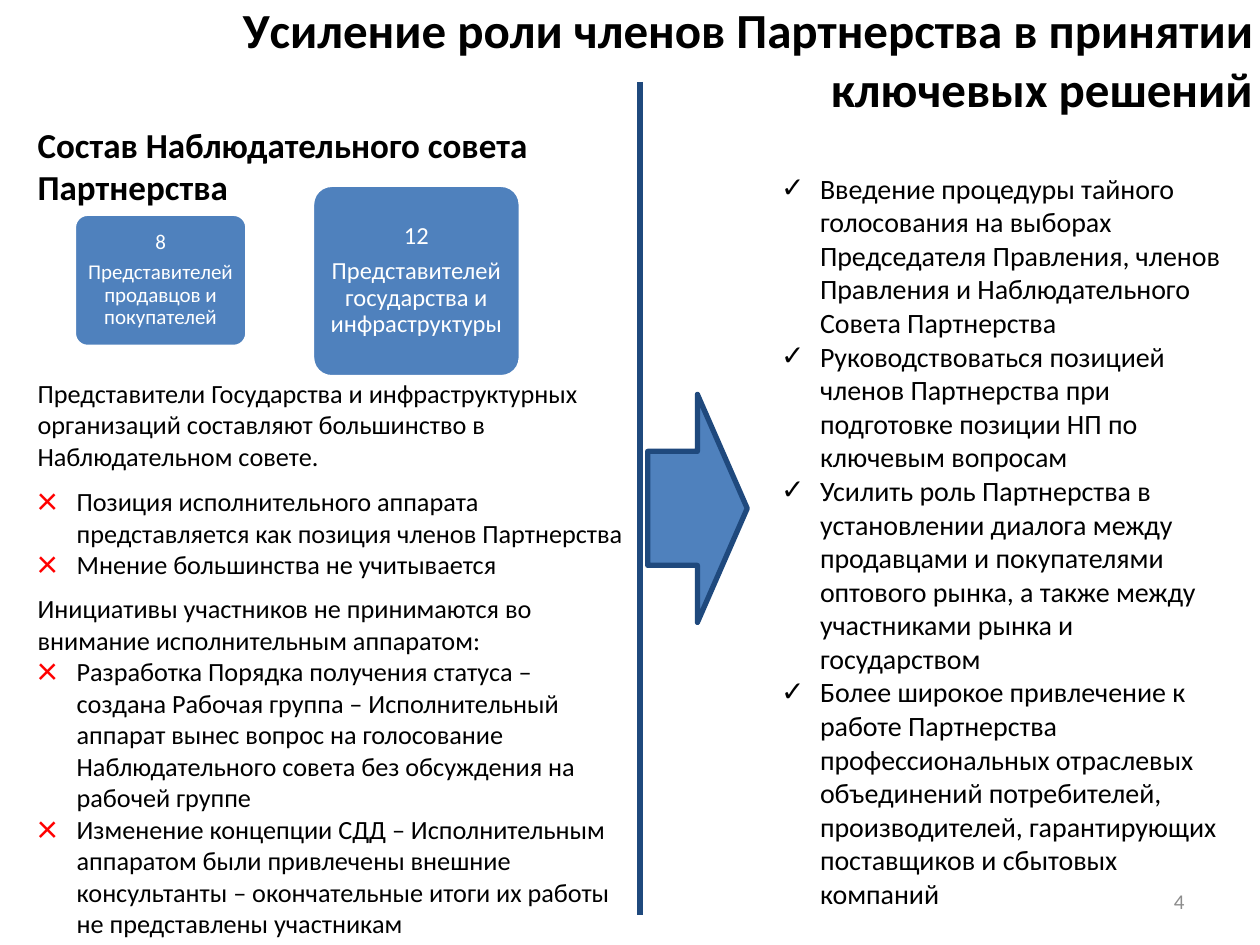
import collections
import pptx
import pptx.dml.color
import pptx.enum.shapes
import pptx.enum.text
import pptx.util
import lxml.etree

COLORS = {
    "text": "000000",
    "fill": "4F81BD",
    "edge": "1F497D",
    "light": "FFFFFF",
    "cross": "FF0000",
    "number": "8C8C8C",
}
FONT = "Calibri"
COLUMNS, ROWS = 100, 75
WIDTH, HEIGHT = pptx.util.Inches(10), pptx.util.Inches(7.5)
INDENT = pptx.util.Inches(0.31)
ALIGN = pptx.enum.text.PP_ALIGN
ANCHOR = pptx.enum.text.MSO_ANCHOR
SHAPE = pptx.enum.shapes.MSO_SHAPE

Box = collections.namedtuple("Box", "left top width height")
Entry = collections.namedtuple(
    "Entry", "text size bold before bullet", defaults=(False, 0, None)
)

TITLE = "Уcиление роли членов Партнерства в принятии ключевых решений"
COUNCIL = [
    Entry("Состав Наблюдательного совета Партнерства", 20, True),
    Entry("Представители Государства и инфраструктурных организаций составляют "
          "большинство в Наблюдательном совете.", 15, before=97),
    Entry("Позиция исполнительного аппарата представляется как позиция членов "
          "Партнерства", 15, before=8, bullet="×"),
    Entry("Мнение большинства не учитывается", 15, bullet="×"),
    Entry("Инициативы участников не принимаются во внимание исполнительным "
          "аппаратом:", 15, before=7),
    Entry("Разработка Порядка получения статуса – создана Рабочая группа – "
          "Исполнительный аппарат вынес вопрос на голосование Наблюдательного "
          "совета без обсуждения на рабочей группе", 15, bullet="×"),
    Entry("Изменение концепции СДД – Исполнительным аппаратом были привлечены "
          "внешние консультанты – окончательные итоги их работы не представлены "
          "участникам", 15, bullet="×"),
]
PROPOSALS = [
    Entry(text, 16, bullet="✓")
    for text in (
        "Введение процедуры тайного голосования на выборах Председателя "
        "Правления, членов Правления и Наблюдательного Совета Партнерства",
        "Руководствоваться позицией членов Партнерства при подготовке позиции "
        "НП по ключевым вопросам",
        "Усилить роль Партнерства в установлении диалога между продавцами и "
        "покупателями оптового рынка, а также между участниками рынка и "
        "государством",
        "Более широкое привлечение к работе Партнерства профессиональных "
        "отраслевых объединений потребителей, производителей, гарантирующих "
        "поставщиков и сбытовых компаний",
    )
]
SEATS = [
    (Box(3.9, 7.7, 13.7, 10.5), 12, "8", "Представителей продавцов и покупателей"),
    (Box(22.8, 5.4, 16.5, 15.2), 14, "12",
     "Представителей государства и инфраструктуры"),
]


def rgb(name):
    """Return the named colour."""
    return pptx.dml.color.RGBColor.from_string(COLORS[name])


def place(box):
    """Turn a box in grid columns and rows into slide lengths."""
    return (int(box.left * WIDTH / COLUMNS), int(box.top * HEIGHT / ROWS),
            int(box.width * WIDTH / COLUMNS), int(box.height * HEIGHT / ROWS))


def add_bullet(paragraph, mark):
    """Give a paragraph a hanging bullet; crosses are red and enlarged."""
    properties = paragraph._p.get_or_add_pPr()
    properties.set("marL", str(INDENT))
    properties.set("indent", str(-INDENT))

    def add(parent, tag, **attributes):
        name = pptx.oxml.ns.qn(tag)
        return lxml.etree.SubElement(parent, name, **attributes)

    if mark == "×":
        add(add(properties, "a:buClr"), "a:srgbClr", val=COLORS["cross"])
        add(properties, "a:buSzPct", val="150000")
    add(properties, "a:buFont", typeface=FONT)
    add(properties, "a:buChar", char=mark)


def write(frame, entries, color="text", align=ALIGN.LEFT, anchor=ANCHOR.TOP):
    """Fill a text frame with formatted entries."""
    frame.word_wrap = True
    frame.vertical_anchor = anchor
    frame.text = "\n".join(entry.text for entry in entries)
    for paragraph, entry in zip(frame.paragraphs, entries):
        paragraph.alignment = align
        paragraph.space_before = pptx.util.Pt(entry.before)
        if entry.bullet:
            add_bullet(paragraph, entry.bullet)
        font = paragraph.runs[0].font
        font.name, font.size, font.bold = FONT, pptx.util.Pt(entry.size), entry.bold
        font.color.rgb = rgb(color)


def add_text(slide, box, entries, **style):
    """Place a text box."""
    write(slide.shapes.add_textbox(*place(box)).text_frame, entries, **style)


def add_block(slide, kind, box, edge, weight):
    """Place a filled and outlined preset shape."""
    block = slide.shapes.add_shape(kind, *place(box))
    block.shadow.inherit = False
    block.fill.solid()
    block.fill.fore_color.rgb = rgb("fill")
    block.line.color.rgb = rgb(edge)
    block.line.width = pptx.util.Pt(weight)
    return block


def add_seats(slide, box, size, count, members):
    """Place one rounded card with a number of council seats."""
    card = add_block(slide, SHAPE.ROUNDED_RECTANGLE, box, "light", 2)
    card.adjustments[0] = 0.1
    frame = card.text_frame
    frame.margin_left = frame.margin_right = pptx.util.Inches(0.05)
    frame.margin_top = frame.margin_bottom = pptx.util.Inches(0.05)
    write(frame, [Entry(count, size), Entry(members, size)],
          color="light", align=ALIGN.CENTER, anchor=ANCHOR.MIDDLE)
    for paragraph in frame.paragraphs:
        paragraph.line_spacing = 0.9
        paragraph.space_after = pptx.util.Pt(0.35 * size)


def add_council(slide, box):
    """Place the left column: council text and its two seat cards."""
    add_text(slide, box, COUNCIL)
    for seat, size, count, members in SEATS:
        card = seat._replace(left=box.left + seat.left, top=box.top + seat.top)
        add_seats(slide, card, size, count, members)


def add_transition(slide, box):
    """Place the vertical divider and the arrow to its right."""
    left, top, _, height = place(box)
    divider = slide.shapes.add_connector(
        pptx.enum.shapes.MSO_CONNECTOR.STRAIGHT, left, top, left, top + height)
    divider.line.color.rgb = rgb("edge")
    divider.line.width = pptx.util.Pt(3)
    lxml.etree.SubElement(divider._element.spPr, pptx.oxml.ns.qn("a:effectLst"))
    arrow = Box(box.left + 0.6, box.top + 24.8, box.width - 0.6, 18.1)
    add_block(slide, SHAPE.RIGHT_ARROW, arrow, "edge", 3)


def main():
    """Build and save the slide."""
    deck = pptx.Presentation()
    deck.slide_width, deck.slide_height = WIDTH, HEIGHT
    slide = deck.slides.add_slide(deck.slide_layouts[6])
    add_council(slide, Box(2, 9.3, 48.8, 64.4))
    add_text(slide, Box(10.4, 0, 90, 9.3), [Entry(TITLE, 28, True)],
             align=ALIGN.RIGHT, anchor=ANCHOR.MIDDLE)
    add_transition(slide, Box(50.8, 6.5, 8.5, 66.1))
    add_text(slide, Box(61, 13.1, 37.1, 60.2), PROPOSALS)
    add_text(slide, Box(71.7, 69.5, 23.3, 4), [Entry("4", 12)],
             color="number", align=ALIGN.RIGHT, anchor=ANCHOR.MIDDLE)
    deck.save("out.pptx")


if __name__ == "__main__":
    main()
